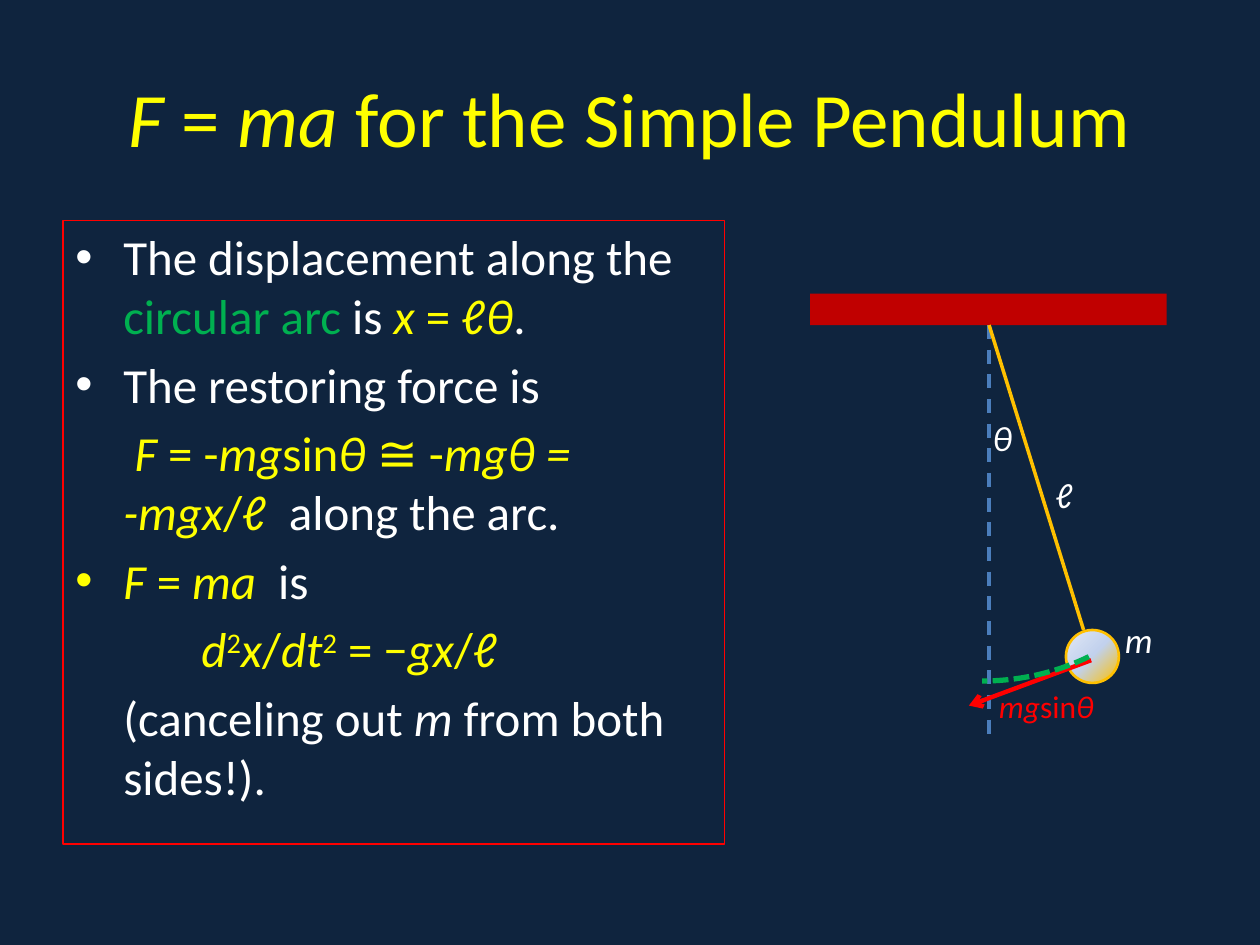
import copy
from dataclasses import dataclass

import pptx
import pptx.util
import pptx.dml.color
import pptx.enum.dml
import pptx.enum.shapes
import pptx.enum.text
import pptx.oxml
import pptx.oxml.ns

Inches, Pt = pptx.util.Inches, pptx.util.Pt
SHAPE = pptx.enum.shapes.MSO_SHAPE
DASH = pptx.enum.dml.MSO_LINE
ANCHOR = pptx.enum.text.MSO_ANCHOR
ALIGN = pptx.enum.text.PP_ALIGN


@dataclass(frozen=True)
class Theme:
    font: str = "Calibri"
    background: str = "0F243E"
    text: str = "FFFFFF"
    formula: str = "FFFF00"
    arc: str = "00B050"
    force: str = "FF0000"
    support: str = "C00000"
    vertical: str = "4B7EBC"
    string: str = "FFC000"
    bob: tuple = ((0, "FFC000"), (0.5, "C2D1ED"), (1, "E1E8F5"))
    title_size: int = 44
    body_size: int = 28
    label_size: int = 20
    force_size: int = 18


T = Theme()


def rgb(value):
    return pptx.dml.color.RGBColor.from_string(value)


def box(at):
    return [Inches(v) for v in at]


def sub(parent, tag, **attrs):
    child = pptx.oxml.parse_xml(f"<{tag} {pptx.oxml.ns.nsdecls('a')}/>")
    for name, value in attrs.items():
        child.set(name, value)
    parent.append(child)
    return child


def add_run(p, text, size=T.body_size, color=T.text, italic=False, raised=False):
    r = p.add_run()
    r.text = text
    r.font.name, r.font.size = T.font, Pt(size)
    r.font.color.rgb, r.font.italic = rgb(color), italic
    if raised:
        r.font._element.set("baseline", "30000")


def add_runs(p, runs, size, color):
    for text, style in runs:
        add_run(p, text, size=size, color=style.get("color", color),
                italic=style.get("italic", False), raised=style.get("raised", False))


def add_textbox(s, at, runs, size, color=T.text, align=ALIGN.LEFT, anchor=ANCHOR.TOP):
    tf = s.shapes.add_textbox(*box(at)).text_frame
    tf.word_wrap, tf.vertical_anchor = True, anchor
    tf.paragraphs[0].alignment = align
    add_runs(tf.paragraphs[0], runs, size, color)


def format_paragraph(p, margin, indent, bullet_color=None):
    p.space_before = Pt(T.body_size * 0.2)
    pPr = p._p.get_or_add_pPr()
    pPr.set("marL", str(Inches(margin)))
    pPr.set("indent", str(Inches(indent)))
    if bullet_color:
        sub(sub(pPr, "a:buClr"), "a:srgbClr", val=bullet_color)
        sub(pPr, "a:buFont", typeface="Arial")
        sub(pPr, "a:buChar", char="•")
    else:
        sub(pPr, "a:buNone")


def style_line(line, color, width, dash=None):
    line.color.rgb, line.width = rgb(color), Pt(width)
    if dash:
        line.dash_style = dash


def add_shape(s, kind, at, fill=None, line=None):
    sp = s.shapes.add_shape(kind, *box(at))
    sp.shadow.inherit = False
    if fill:
        sp.fill.solid()
        sp.fill.fore_color.rgb = rgb(fill)
    else:
        sp.fill.background()
    if line:
        style_line(sp.line, *line)
    else:
        sp.line.fill.background()
    return sp


def add_line(s, start, end, color, width, dash=None, arrow=False):
    c = s.shapes.add_connector(pptx.enum.shapes.MSO_CONNECTOR.STRAIGHT, *box(start + end))
    style_line(c.line, color, width, dash)
    if arrow:
        sub(c.line._get_or_add_ln(), "a:tailEnd", type="arrow")
    sub(c._element.spPr, "a:effectLst")


def fill_gradient(sp, stops, angle):
    sp.fill.gradient()
    sp.fill.gradient_angle = angle
    gs_list = sp._element.spPr.find(".//" + pptx.oxml.ns.qn("a:gsLst"))
    while len(gs_list) < len(stops):
        gs_list.append(copy.deepcopy(gs_list[0]))
    for stop, (position, color) in zip(sp.fill.gradient_stops, stops):
        stop.position, stop.color.rgb = position, rgb(color)


def add_body(s):
    up, it = {}, {"italic": True}
    white, sup = {"color": T.text}, {"raised": True}
    hang = (0.38, -0.38)
    paragraphs = [
        ((*hang, T.text), [
            ("The displacement along the ", white), ("circular arc", {"color": T.arc}),
            (" is ", white), ("x", it), (" = ", up), ("ℓθ", it), (".", white)]),
        ((*hang, T.text), [("The restoring force is", white)]),
        ((0.38, 0.09), [
            ("F", it), (" = -", up), ("mg", it), ("sin", up), ("θ", it), (" ≅ -", up),
            ("mgθ = -mgx", it), ("/", up), ("ℓ  ", it), ("along the arc.", white)]),
        ((*hang, T.formula), [("F", it), (" = ", up), ("ma  ", it), ("is", white)]),
        ((1, 0), [
            ("d", it), ("2", sup), ("x", it), ("/", up), ("dt", it), ("2", sup),
            (" = −", up), ("gx", it), ("/", up), ("ℓ", it)]),
        ((0.38, 0), [
            ("(canceling out ", white), ("m", {**white, **it}),
            (" from both sides!).", white)]),
    ]
    tf = add_shape(s, SHAPE.RECTANGLE, (0.5, 1.75, 5.25, 4.95), line=(T.force, 1)).text_frame
    tf.word_wrap, tf.vertical_anchor = True, ANCHOR.TOP
    for i, (layout, runs) in enumerate(paragraphs):
        p = tf.add_paragraph() if i else tf.paragraphs[0]
        p.alignment = ALIGN.LEFT
        format_paragraph(p, *layout)
        add_runs(p, runs, T.body_size, T.formula)


def add_pendulum(s):
    pivot = (7.85, 2.58)
    it = {"italic": True}
    add_shape(s, SHAPE.RECTANGLE, (6.43, 2.33, 2.83, 0.25), fill=T.support)
    add_line(s, pivot, (7.85, 5.83), T.vertical, 2, dash=DASH.DASH)
    bob = add_shape(s, SHAPE.OVAL, (8.46, 5, 0.42, 0.42), line=(T.string, 1.5))
    fill_gradient(bob, T.bob, 135)
    add_line(s, pivot, (8.6, 5), T.string, 2)
    for text, x, y in (("ℓ", 8.28, 3.71), ("θ", 7.78, 3.26), ("m", 8.83, 4.86)):
        add_textbox(s, (x, y, 0.5, 0.44), [(text, it)], T.label_size)
    add_textbox(s, (7.83, 5.4, 1.17, 0.4), [("mg", it), ("sin", {}), ("θ", it)],
                T.force_size, T.force)
    add_line(s, (8.66, 5.24), (7.69, 5.6), T.force, 2.5, arrow=True)
    arc = add_shape(s, SHAPE.ARC, (6.17, 1.99, 3.25, 3.58),
                    line=(T.arc, 3, DASH.SQUARE_DOT))
    arc.rotation = 90
    arc.adjustments[0], arc.adjustments[1] = 329.39 * 0.6, 0


def main():
    prs = pptx.Presentation()
    prs.slide_width, prs.slide_height = Inches(10), Inches(7.5)
    s = prs.slides.add_slide(prs.slide_layouts[6])
    s.background.fill.solid()
    s.background.fill.fore_color.rgb = rgb(T.background)
    it = {"italic": True}
    add_textbox(s, (0.5, 0.3, 9, 1.25),
                [("F", it), (" = ", {}), ("ma", it), (" for the Simple Pendulum", {})],
                T.title_size, T.formula, ALIGN.CENTER, ANCHOR.MIDDLE)
    add_body(s)
    add_pendulum(s)
    prs.save("out.pptx")


if __name__ == "__main__":
    main()
